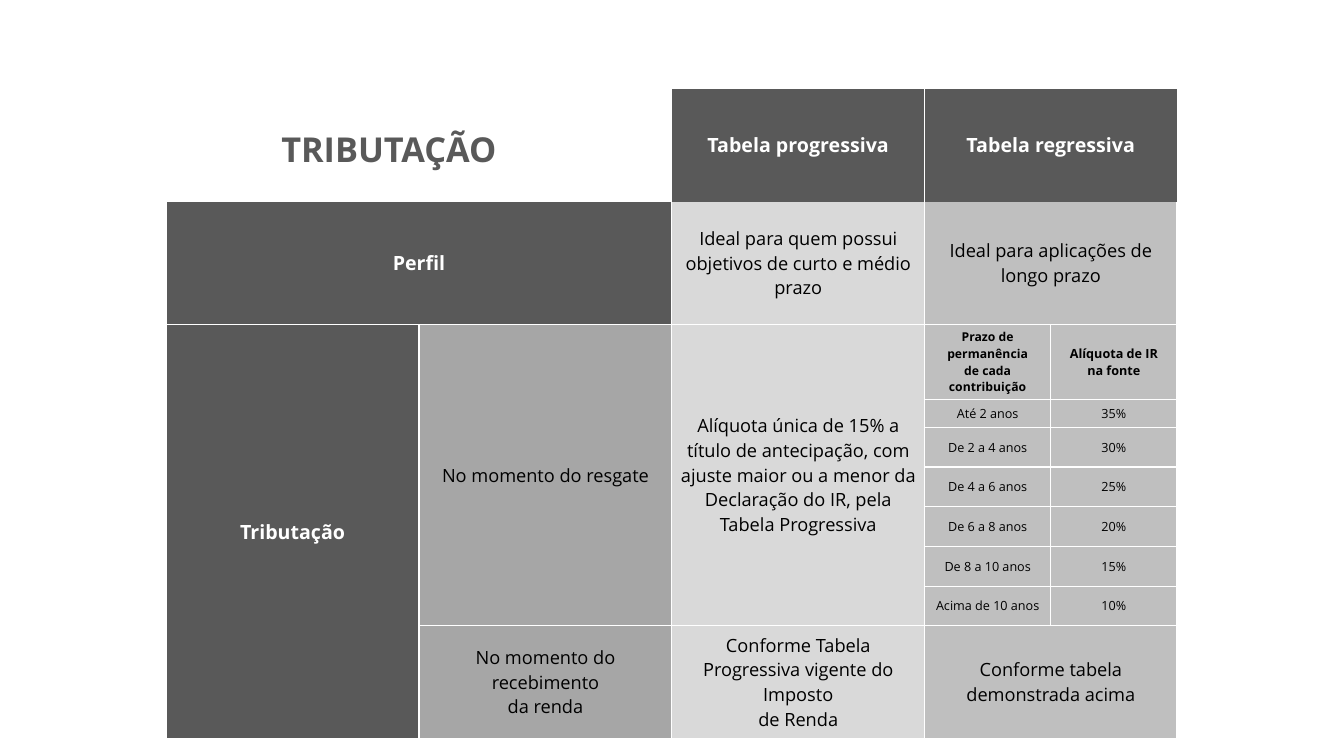
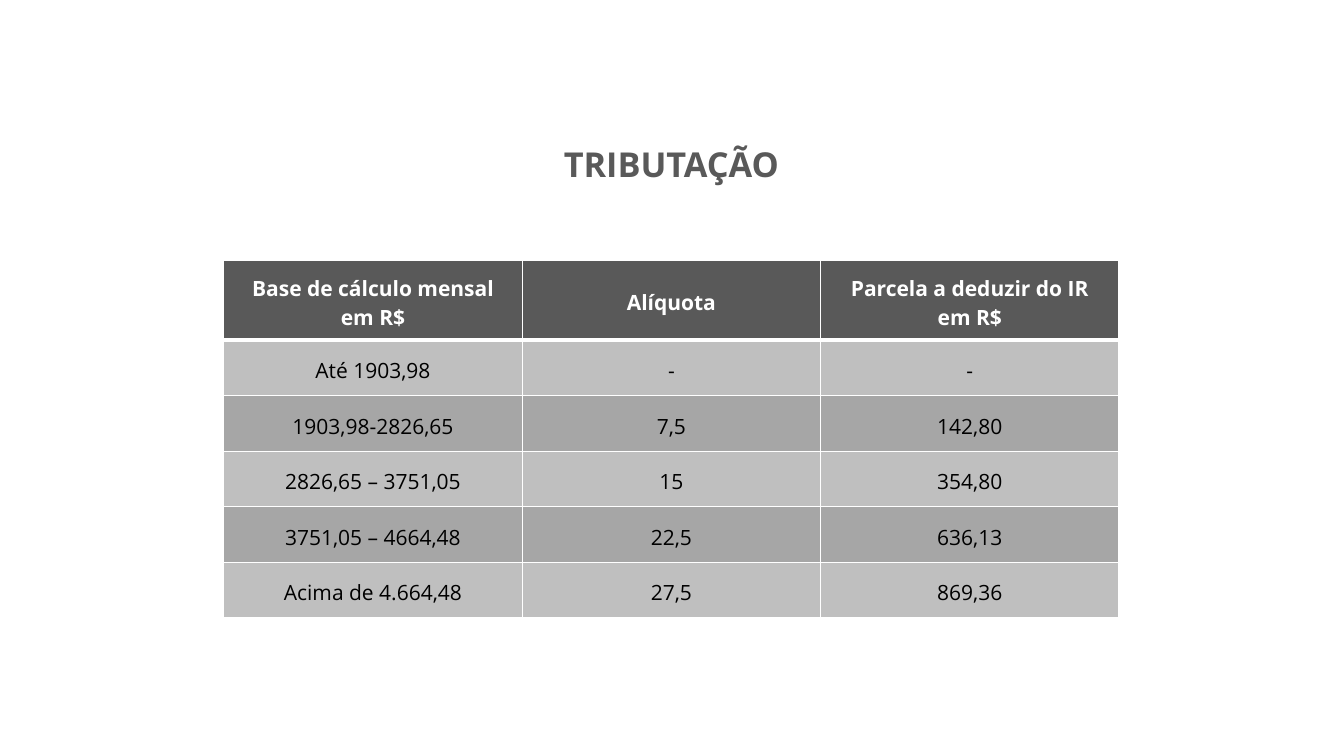
from dataclasses import dataclass
from itertools import product

from lxml import etree
from pptx import Presentation
from pptx import util as u
from pptx.dml.color import RGBColor
from pptx.enum import text as t
from pptx.oxml.ns import qn

FONT = "Open Sans"
DARK, MID, SOFT, LIGHT = "595959", "A6A6A6", "BFBFBF", "D9D9D9"
WHITE, BLACK = "FFFFFF", "000000"
TITLE_ONLY = 5
SIDES = {"l": "a:lnL", "r": "a:lnR", "t": "a:lnT", "b": "a:lnB"}


@dataclass(frozen=True)
class Entry:
    """One table cell, placed by row and column, with its span and look."""
    row: int
    col: int
    text: str = ""
    fill: str = ""
    size: float = 13
    bold: bool = False
    color: str = BLACK
    rows: int = 1
    cols: int = 1
    sides: str = "lrtb"
    bottom_width: float = 1


@dataclass(frozen=True)
class Grid:
    """Table position, column widths, row heights and cell margins, in cm."""
    left: float
    top: float
    widths: list[float]
    heights: list[float]
    side_margin: float
    top_margin: float
    bottom_margin: float


def rgb(color: str) -> RGBColor:
    return RGBColor.from_string(color)


def write(frame, content: str, *, size: float, color: str, bold: bool = False) -> None:
    frame.text = content
    for paragraph in frame.paragraphs:
        paragraph.alignment = t.PP_ALIGN.CENTER
        for run in paragraph.runs:
            run.font.name = FONT
            run.font.size = u.Pt(size)
            run.font.bold = bold
            run.font.color.rgb = rgb(color)


def set_borders(cell, sides: str, bottom_width: float) -> None:
    """Draw white lines on the named sides and hide the others."""
    properties = cell._tc.get_or_add_tcPr()
    for position, (side, tag) in enumerate(SIDES.items()):
        width = bottom_width if side == "b" else 1
        line = etree.Element(qn(tag), w=str(u.Pt(width)))
        if side in sides:
            solid = etree.SubElement(line, qn("a:solidFill"))
            etree.SubElement(solid, qn("a:srgbClr"), val=WHITE)
        else:
            etree.SubElement(line, qn("a:noFill"))
        properties.insert(position, line)


def add_title(slide, left: float, top: float) -> None:
    title = slide.shapes.title
    title.left, title.top = u.Cm(left), u.Cm(top)
    title.width, title.height = u.Cm(6.1), u.Cm(1.3)
    frame = title.text_frame
    frame.word_wrap = False
    frame.auto_size = t.MSO_AUTO_SIZE.NONE
    frame.vertical_anchor = t.MSO_ANCHOR.MIDDLE
    write(frame, "TRIBUTAÇÃO", size=24.5, color=DARK, bold=True)


def add_grid(slide, grid: Grid, entries: list[Entry]) -> None:
    table = slide.shapes.add_table(
        len(grid.heights), len(grid.widths), u.Cm(grid.left), u.Cm(grid.top),
        u.Cm(sum(grid.widths)), u.Cm(sum(grid.heights))).table
    table.first_row = table.horz_banding = False
    for column, width in zip(table.columns, grid.widths):
        column.width = u.Cm(width)
    for row, height in zip(table.rows, grid.heights):
        row.height = u.Cm(height)
    for entry in entries:
        fill_entry(table, grid, entry)


def fill_entry(table, grid: Grid, entry: Entry) -> None:
    last_row, last_col = entry.row + entry.rows - 1, entry.col + entry.cols - 1
    first = table.cell(entry.row, entry.col)
    if entry.rows * entry.cols > 1:
        first.merge(table.cell(last_row, last_col))
    for row, col in product(range(entry.row, last_row + 1),
                            range(entry.col, last_col + 1)):
        cell = table.cell(row, col)
        if entry.fill:
            cell.fill.solid()
            cell.fill.fore_color.rgb = rgb(entry.fill)
        else:
            cell.fill.background()
        cell.margin_left = cell.margin_right = u.Cm(grid.side_margin)
        cell.margin_top = u.Cm(grid.top_margin)
        cell.margin_bottom = u.Cm(grid.bottom_margin)
        cell.vertical_anchor = t.MSO_ANCHOR.MIDDLE
        set_borders(cell, entry.sides, entry.bottom_width)
    if entry.text:
        write(first.text_frame, entry.text, size=entry.size,
              color=entry.color, bold=entry.bold)


def build_comparison(slide) -> None:
    add_title(slide, 6.75, 3.1)
    heading = {"fill": DARK, "size": 14, "bold": True, "color": WHITE}
    entries = [
        Entry(0, 0, cols=2, sides=""),
        Entry(0, 2, "Tabela progressiva", sides="r", **heading),
        Entry(0, 3, "Tabela regressiva", cols=2, sides="l", **heading),
        Entry(1, 0, "Perfil", cols=2, sides="lrb", **heading),
        Entry(1, 2, "Ideal para quem possui objetivos de curto e médio prazo",
              LIGHT, sides="lrb"),
        Entry(1, 3, "Ideal para aplicações de longo prazo", SOFT, cols=2, sides="lrb"),
        Entry(2, 0, "Tributação", rows=8, **heading),
        Entry(2, 1, "No momento do resgate", MID, rows=7),
        Entry(2, 2, "Alíquota única de 15% a título de antecipação, com ajuste maior "
              "ou a menor da Declaração do IR, pela Tabela Progressiva", LIGHT, rows=7),
        Entry(2, 3, "Prazo de permanência\nde cada contribuição", SOFT, 8.7, True),
        Entry(2, 4, "Alíquota de IR\nna fonte", SOFT, 9, True),
        Entry(9, 1, "No momento do recebimento\nda renda", MID),
        Entry(9, 2, "Conforme Tabela Progressiva vigente do Imposto\nde Renda", LIGHT),
        Entry(9, 3, "Conforme tabela demonstrada acima", SOFT, cols=2),
    ]
    rates = [("Até 2 anos", "35%"), ("De 2 a 4 anos", "30%"), ("De 4 a 6 anos", "25%"),
             ("De 6 a 8 anos", "20%"), ("De 8 a 10 anos", "15%"),
             ("Acima de 10 anos", "10%")]
    entries += [Entry(row, col, value, SOFT, 9)
                for row, rate in enumerate(rates, start=3)
                for col, value in enumerate(rate, start=3)]
    heights = [2.84, 3.1, 1.89, 0.7] + [1.0] * 5 + [2.84]
    add_grid(slide, Grid(4.19, 2.24, [6.37] * 3 + [3.18] * 2, heights,
                         0.23, 0.1, 0.1), entries)


def build_progressive_rates(slide) -> None:
    add_title(slide, 13.87, 3.48)
    headings = ["Base de cálculo mensal em R$", "Alíquota",
                "Parcela a deduzir do IR\nem R$"]
    brackets = [("Até 1903,98", "-", "-"),
                ("1903,98-2826,65", "7,5", "142,80"),
                ("2826,65 – 3751,05", "15", "354,80"),
                ("3751,05 – 4664,48", "22,5", "636,13"),
                ("Acima de 4.664,48", "27,5", "869,36")]
    entries = [Entry(0, col, heading, DARK, 15, True, WHITE, bottom_width=3)
               for col, heading in enumerate(headings)]
    entries += [Entry(row, col, value, SOFT if row % 2 else MID, 15,
                      sides="lrb" if row == 1 else "lrtb")
                for row, bracket in enumerate(brackets, start=1)
                for col, value in enumerate(bracket)]
    add_grid(slide, Grid(5.64, 6.55, [7.52] * 3, [2.02] + [1.4] * 5,
                         0.38, 0.33, 0.2), entries)


def main() -> None:
    deck = Presentation()
    deck.slide_width, deck.slide_height = u.Cm(33.87), u.Cm(19.05)
    for build in (build_comparison, build_progressive_rates):
        build(deck.slides.add_slide(deck.slide_layouts[TITLE_ONLY]))
    deck.save("out.pptx")


if __name__ == "__main__":
    main()
